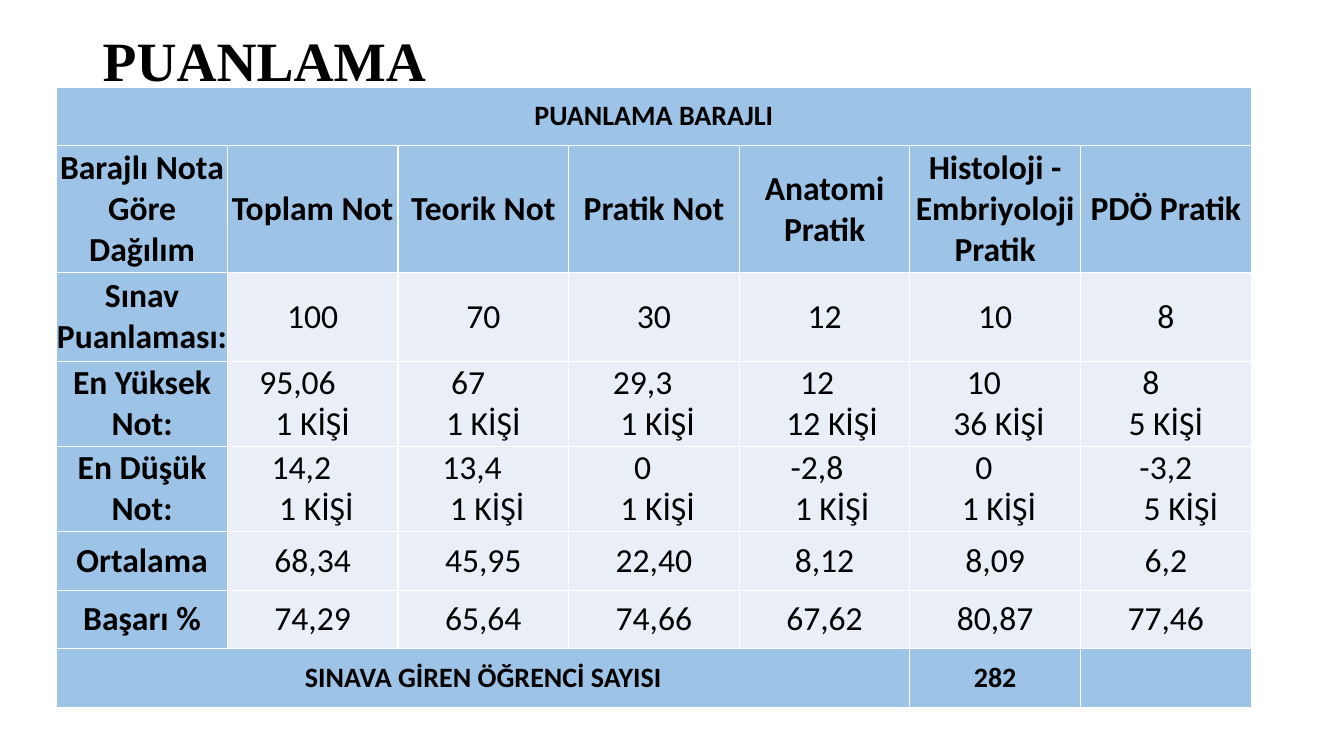
from lxml import etree
from pptx import Presentation
from pptx.dml.color import RGBColor
from pptx.enum.text import MSO_ANCHOR, PP_ALIGN
from pptx.oxml.ns import qn
from pptx.util import Cm, Pt

MIDDLE = MSO_ANCHOR.MIDDLE
CENTER = PP_ALIGN.CENTER
COLORS = {"head": "9DC3E6", "body": "EAEFF7", "line": "FFFFFF", "text": "000000"}
SPACE = 0.19
SHIFT = 4

ROWS = [
    ["PUANLAMA BARAJLI"] + [""] * 6,
    ["Barajlı Nota Göre Dağılım", "Toplam Not", "Teorik Not", "Pratik Not",
     "Anatomi Pratik", "Histoloji - Embriyoloji Pratik", "PDÖ Pratik"],
    ["Sınav Puanlaması:", "100", "70", "30", "12", "10", "8"],
    ["En Yüksek Not:", "95,06\n1 KİŞİ", "67\n1 KİŞİ", "29,3\n1 KİŞİ",
     "12\n12 KİŞİ", "10\n36 KİŞİ", "8\n5 KİŞİ"],
    ["En Düşük Not:", "14,2\n1 KİŞİ", "13,4\n1 KİŞİ", "0\n1 KİŞİ",
     "-2,8\n1 KİŞİ", "0\n1 KİŞİ", "-3,2\n5 KİŞİ"],
    ["Ortalama", "68,34", "45,95", "22,40", "8,12", "8,09", "6,2"],
    ["Başarı %", "74,29", "65,64", "74,66", "67,62", "80,87", "77,46"],
    ["SINAVA GİREN ÖĞRENCİ SAYISI", "", "", "", "", "282", ""],
]
HEIGHTS = [1.48, 3.2, 2.24, 2.14, 2.14, 1.48, 1.48, 1.48]
OFFSETS = {3: [4, 4, 3, 2, 3, 4], 4: [3, 3, 3, 2, 3, 0]}
WIDTH = 4.3
LAST = len(ROWS) - 1


def set_font(font, name, size, bold):
    font.name = name
    font.size = Pt(size)
    font.bold = bold
    font.color.rgb = RGBColor.from_string(COLORS["text"])


def add_lines(cell):
    props = cell._tc.get_or_add_tcPr()
    for side in ("a:lnL", "a:lnR", "a:lnT", "a:lnB"):
        line = etree.SubElement(props, qn(side), w=str(Pt(1)))
        fill = etree.SubElement(line, qn("a:solidFill"))
        etree.SubElement(fill, qn("a:srgbClr"), val=COLORS["line"])


prs = Presentation()
prs.slide_width = Cm(33.87)
prs.slide_height = Cm(19.05)
slide = prs.slides.add_slide(prs.slide_layouts[6])

title = slide.shapes.add_textbox(Cm(2.34), Cm(1.02), Cm(29.21), Cm(1.17))
frame = title.text_frame
frame.word_wrap = True
frame.vertical_anchor = MIDDLE
para = frame.paragraphs[0]
para.text = "PUANLAMA"
para.line_spacing = 0.9
set_font(para.font, "Times New Roman", 39.6, True)

table = slide.shapes.add_table(
    len(ROWS), 7, Cm(1.43), Cm(2.19), Cm(7 * WIDTH), Cm(sum(HEIGHTS))).table
table.first_row = False
table.horz_banding = False
for col in table.columns:
    col.width = Cm(WIDTH)

for r, texts in enumerate(ROWS):
    table.rows[r].height = Cm(HEIGHTS[r])
    for c, text in enumerate(texts):
        cell = table.cell(r, c)
        head = r in (0, 1, LAST) or c == 0
        size = 20 if r in (0, LAST) else 24
        add_lines(cell)
        cell.fill.solid()
        cell.fill.fore_color.rgb = RGBColor.from_string(COLORS["head" if head else "body"])
        cell.vertical_anchor = MIDDLE
        cell.margin_left = cell.margin_right = 0
        cell.margin_top = cell.margin_bottom = 0
        cell.text = text
        for para in cell.text_frame.paragraphs:
            para.alignment = CENTER
            set_font(para.font, "Calibri", size, head)
        if r in OFFSETS and c > 0:
            cell.margin_right = Cm(OFFSETS[r][c - 1] * SPACE)
            count = cell.text_frame.paragraphs[1]
            props = count._p.get_or_add_pPr()
            props.set("marL", str(Cm(SHIFT * SPACE)))
            props.set("indent", "0")

table.cell(0, 0).merge(table.cell(0, 6))
table.cell(LAST, 0).merge(table.cell(LAST, 4))

prs.save("out.pptx")
